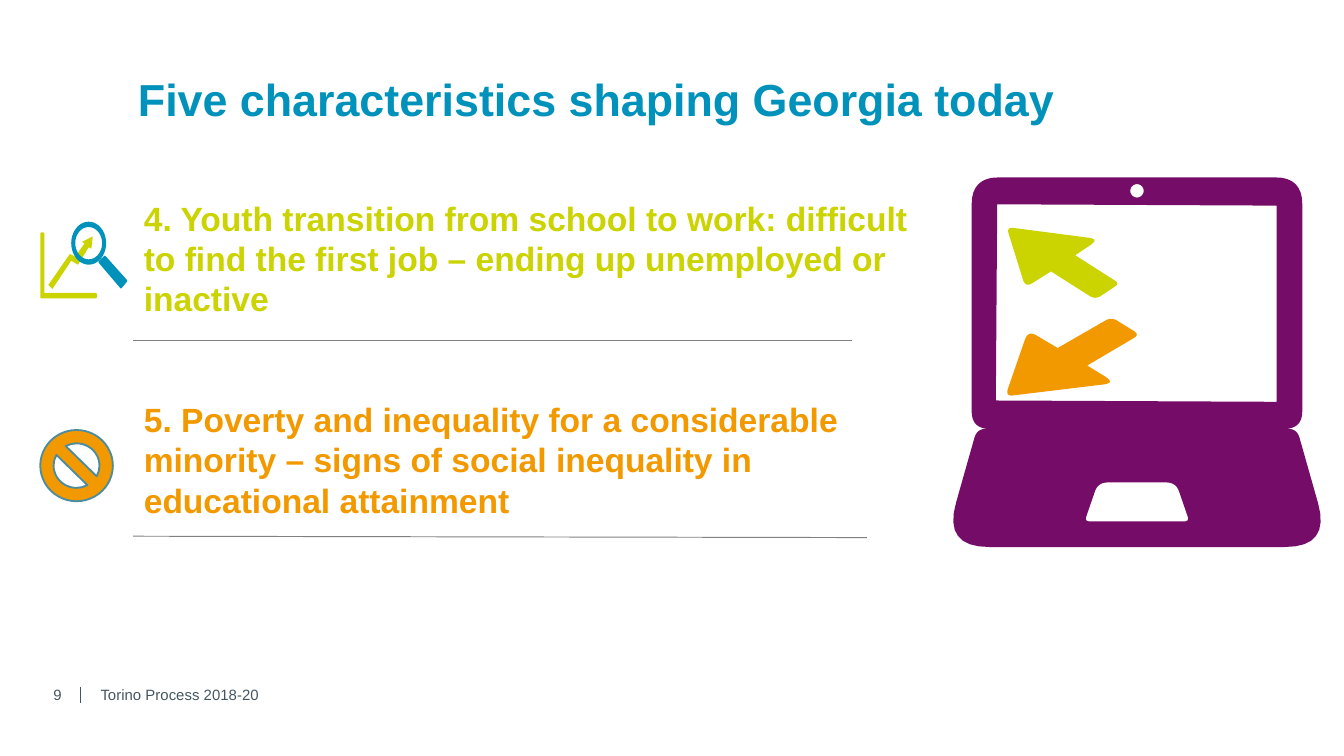
"""Build the slide on two of the five characteristics shaping Georgia today."""
from dataclasses import dataclass
from math import cos, dist, pi, sin
from typing import NamedTuple

from lxml.etree import SubElement
from pptx import Presentation
from pptx.dml.color import RGBColor as Rgb
from pptx.enum.shapes import MSO_CONNECTOR as Connector, MSO_SHAPE as Preset
from pptx.enum.text import MSO_ANCHOR as Anchor, MSO_AUTO_SIZE as AutoSize, PP_ALIGN as Align
from pptx.oxml.ns import qn
from pptx.util import Inches, Pt

COLUMNS = 10
ROWS = COLUMNS * 9 / 16
COLUMN = Inches(10) / COLUMNS
LAPTOP_AXIS = 8.46


@dataclass(frozen=True)
class Theme:
    blue: str = "0092BB"
    lime: str = "CBD300"
    orange: str = "F39900"
    purple: str = "750D68"
    teal: str = "4B8D9E"
    slate: str = "455560"
    grey: str = "808080"
    font: str = "Arial"
    title_size: float = 24
    item_size: float = 18
    footer_size: float = 8
    item_leading: float = 1.0
    item_gap: float = 43


class Area(NamedTuple):
    left: float
    top: float
    width: float
    height: float


class Corner(NamedTuple):
    x: float
    y: float
    cut: float = 0


class Item(NamedTuple):
    wording: str
    color: str


class Rule(NamedTuple):
    start: tuple[float, float]
    end: tuple[float, float]
    color: str
    weight: float


class Icon(NamedTuple):
    color: str
    contours: list


THEME = Theme()


def cells(length: float) -> int:
    """Convert grid columns to slide units."""
    return round(length * COLUMN)


def toward(start: Corner, end: Corner, distance: float) -> tuple[float, float]:
    """Return the point at a distance from one corner toward another."""
    share = distance / dist(start[:2], end[:2])
    return start.x + (end.x - start.x) * share, start.y + (end.y - start.y) * share


def rounded(*corners: tuple, steps: int = 8) -> list:
    """Trace a polygon whose corners are softened by their cut."""
    turns = [Corner(*corner) for corner in corners]
    points = []
    for index, turn in enumerate(turns):
        if not turn.cut:
            points.append(turn[:2])
            continue
        entry = toward(turn, turns[index - 1], turn.cut)
        leave = toward(turn, turns[(index + 1) % len(turns)], turn.cut)
        for step in range(steps + 1):
            t = step / steps
            points.append(tuple((1 - t) ** 2 * a + 2 * t * (1 - t) * b + t * t * c
                                for a, b, c in zip(entry, turn[:2], leave)))
    return points


def mirrored(*right: tuple) -> list:
    """Trace a softened polygon symmetric about the laptop's axis."""
    left = [(2 * LAPTOP_AXIS - x, *rest) for x, *rest in reversed(right)]
    return rounded(*right, *left)


def oval(x: float, y: float, across: float, down: float, steps: int = 40) -> list:
    """Trace an ellipse from its centre and radii."""
    angles = [2 * pi * step / steps for step in range(steps)]
    return [(x + across * cos(angle), y + down * sin(angle)) for angle in angles]


def draw_icon(slide, icon: Icon) -> None:
    """Draw all contours of an icon as one filled outline."""
    contours = [[(cells(x), cells(y)) for x, y in contour] for contour in icon.contours]
    builder = slide.shapes.build_freeform(*contours[0][0])
    for index, (start, *others) in enumerate(contours):
        if index:
            builder.move_to(*start)
        builder.add_line_segments(others, close=True)
    outline = builder.convert_to_shape()
    outline.shadow.inherit = False
    outline.fill.solid()
    outline.fill.fore_color.rgb = Rgb.from_string(icon.color)
    outline.line.fill.background()


def draw_rule(slide, rule: Rule) -> None:
    """Draw a thin separating line."""
    line = slide.shapes.add_connector(
        Connector.STRAIGHT, *map(cells, (*rule.start, *rule.end)))
    line.line.color.rgb = Rgb.from_string(rule.color)
    line.line.width = Pt(rule.weight)
    SubElement(line._element.spPr, qn("a:effectLst"))


def place(shape, area: Area) -> None:
    """Move a shape to an area of the grid."""
    shape.left, shape.top, shape.width, shape.height = map(cells, area)


def write(paragraph, wording: str, color: str, size: float, bold: bool = False) -> None:
    """Add one formatted run to a paragraph."""
    run = paragraph.add_run()
    run.text = wording
    run.font.name, run.font.size, run.font.bold = THEME.font, Pt(size), bold
    run.font.color.rgb = Rgb.from_string(color)


def fill_title(title, wording: str, area: Area) -> None:
    """Place and write the slide's title."""
    place(title, area)
    frame = title.text_frame
    frame.auto_size, frame.vertical_anchor = AutoSize.NONE, Anchor.TOP
    heading = frame.paragraphs[0]
    heading.alignment, heading.line_spacing = Align.CENTER, 0.9
    write(heading, wording, THEME.blue, THEME.title_size, True)


def fill_list(body, items: list[Item], area: Area) -> None:
    """Place and write the list of characteristics."""
    place(body, area)
    frame = body.text_frame
    frame.auto_size, frame.vertical_anchor = AutoSize.SHAPE_TO_FIT_TEXT, Anchor.TOP
    for index, item in enumerate(items):
        entry = frame.add_paragraph() if index else frame.paragraphs[0]
        layout = entry._p.get_or_add_pPr()
        layout.set("marL", "0")
        layout.set("indent", "0")
        SubElement(layout, qn("a:buNone"))
        entry.line_spacing = THEME.item_leading
        entry.space_before = Pt(THEME.item_gap if index else 0)
        write(entry, item.wording, item.color, THEME.item_size, True)


def add_footer(slide, wording: str, area: Area) -> None:
    """Add one part of the footer."""
    frame = slide.shapes.add_textbox(*map(cells, area)).text_frame
    frame.word_wrap, frame.vertical_anchor = True, Anchor.MIDDLE
    write(frame.paragraphs[0], wording, THEME.slate, THEME.footer_size)


def add_ban(slide, area: Area) -> None:
    """Add the prohibition sign beside the poverty item."""
    ban = slide.shapes.add_shape(Preset.NO_SYMBOL, *map(cells, area))
    ban.shadow.inherit = False
    ban.fill.solid()
    ban.fill.fore_color.rgb = Rgb.from_string(THEME.orange)
    ban.line.color.rgb = Rgb.from_string(THEME.teal)
    ban.line.width = Pt(1)


ITEMS = [
    Item("4. Youth transition from school to work: difficult to find the first job – "
         "ending up unemployed or inactive", THEME.lime),
    Item("5. Poverty and inequality for a considerable minority – signs of social "
         "inequality in educational attainment", THEME.orange),
]
RULES = [
    Rule((0.6, 5.11), (0.6, 5.23), THEME.slate, 0.25),
    Rule((0.99, 2.53), (6.34, 2.53), THEME.grey, 0.5),
    Rule((0.99, 3.99), (6.45, 4), THEME.grey, 0.5),
]
LAPTOP = Icon(THEME.purple, [
    mirrored((9.69, 1.32, 0.2), (9.69, 3.19, 0.13), (9.56, 3.19), (9.65, 3.19, 0.07), (9.9, 4.07, 0.34)),
    oval(LAPTOP_AXIS, 1.42, 0.05, 0.05),
    rounded((7.42, 1.52), (9.5, 1.53), (9.5, 2.99), (7.41, 2.98)),
    mirrored((8.75, 3.59, 0.07), (8.85, 3.88, 0.04)),
])
YOUTH_ARROW = Icon(THEME.lime, [rounded(
    (7.49, 1.69, 0.05), (8.18, 1.78, 0.08), (8, 1.9), (8.33, 2.11, 0.04),
    (8.15, 2.23, 0.05), (7.82, 2.02), (7.63, 2.14, 0.06))])
TREND = Icon(THEME.lime, [
    rounded((0.69, 1.76), (0.68, 1.85), (0.66, 1.84), (0.58, 1.97), (0.53, 1.94), (0.39, 2.15),
            (0.36, 2.12), (0.52, 1.89), (0.56, 1.91), (0.63, 1.81), (0.61, 1.8)),
    rounded((0.3, 1.73, 0.01), (0.33, 1.73, 0.01), (0.33, 2.18), (0.72, 2.18, 0.01),
            (0.72, 2.22, 0.01), (0.3, 2.22, 0.01)),
])
MAGNIFIER = Icon(THEME.blue, [
    oval(0.66, 1.81, 0.13, 0.16),
    oval(0.66, 1.81, 0.1, 0.12),
    rounded((0.73, 1.95, 0.01), (0.78, 1.9, 0.01), (0.95, 2.09, 0.01), (0.9, 2.15, 0.01)),
])
POVERTY_ARROW = Icon(THEME.orange, [rounded(
    (7.48, 2.95, 0.06), (8.3, 2.85, 0.09), (8.09, 2.72), (8.48, 2.49, 0.05),
    (8.27, 2.36, 0.05), (7.87, 2.59), (7.65, 2.46, 0.07))])


def main() -> None:
    """Assemble and save the slide."""
    deck = Presentation()
    deck.slide_width, deck.slide_height = cells(COLUMNS), cells(ROWS)
    slide = deck.slides.add_slide(deck.slide_layouts[1])
    title, body = slide.placeholders
    fill_title(title, "Five characteristics shaping Georgia today", Area(0.19, 0.53, 8.49, 0.9))
    fill_list(body, ITEMS, Area(0.97, 1.42, 6.17, 2.52))
    add_footer(slide, "Torino Process 2018-20", Area(0.65, 5.06, 1.73, 0.21))
    add_footer(slide, "9", Area(0.3, 5.06, 0.43, 0.21))
    for rule in RULES:
        draw_rule(slide, rule)
    for icon in (LAPTOP, YOUTH_ARROW, TREND, MAGNIFIER, POVERTY_ARROW):
        draw_icon(slide, icon)
    add_ban(slide, Area(0.3, 3.2, 0.54, 0.53))
    deck.save("out.pptx")


if __name__ == "__main__":
    main()
